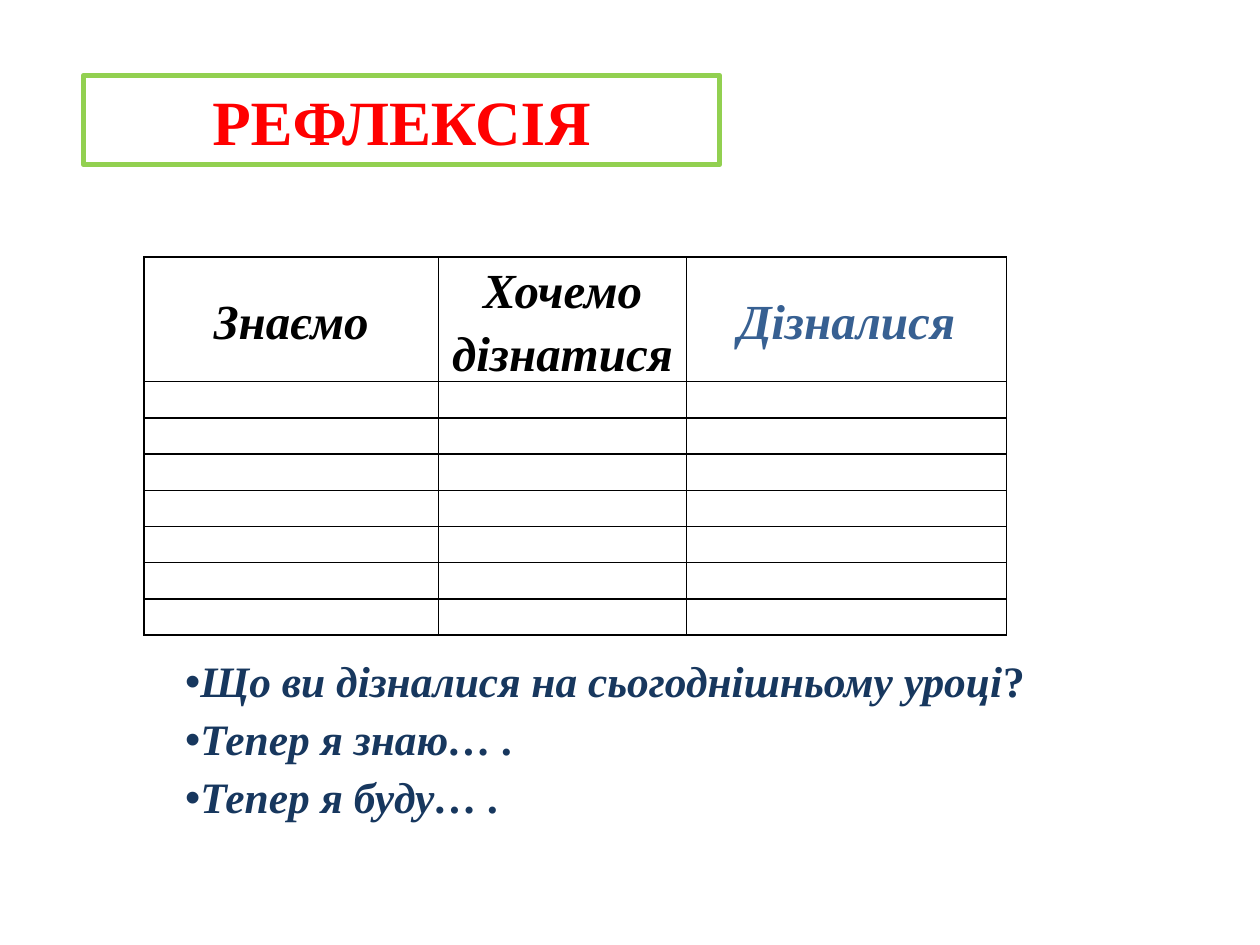
from dataclasses import dataclass

from lxml.etree import SubElement
from pptx import Presentation
from pptx.dml.color import RGBColor
from pptx.enum.text import MSO_ANCHOR, MSO_AUTO_SIZE, PP_ALIGN
from pptx.oxml.ns import qn
from pptx.util import Cm, Pt

FONT = "Times New Roman"
BLACK, WHITE, RED, GREEN = "000000", "FFFFFF", "FF0000", "92D050"
NAVY, BLUE = "17375E", "376092"


@dataclass
class Column:
    heading: str
    width: float
    color: str = BLACK


COLUMNS = [
    Column("Знаємо", 5.94),
    Column("Хочемо дізнатися", 5.0),
    Column("Дізналися", 6.45, BLUE),
]
EMPTY_ROWS = 7
HEADER_HEIGHT, ROW_HEIGHT = 2.48, 0.73
QUESTIONS = [
    ["Що ви дізналися на сьогоднішньому уроці", "?"],
    ["Тепер я знаю… ."],
    ["Тепер я буду… ."],
]


def rgb(color: str) -> RGBColor:
    return RGBColor.from_string(color)


def place(shape, left: float, top: float, width: float, height: float) -> None:
    shape.left, shape.top = Cm(left), Cm(top)
    shape.width, shape.height = Cm(width), Cm(height)


def format_run(run, size: float, color: str, italic: bool = True) -> None:
    font = run.font
    font.name, font.size, font.bold, font.italic = FONT, Pt(size), True, italic
    font.color.rgb = rgb(color)


def add_bullet(paragraph) -> None:
    """Bullet set in from the margin, with the text right behind it."""
    properties = paragraph._p.get_or_add_pPr()
    properties.set("marL", str(Cm(0.97)))
    properties.set("indent", str(Cm(1.24)))
    SubElement(properties, qn("a:buChar"), char="•")


def add_borders(cell) -> None:
    properties = cell._tc.get_or_add_tcPr()
    for index, side in enumerate(("lnL", "lnR", "lnT", "lnB")):
        line = properties.makeelement(qn(f"a:{side}"), {"w": str(Pt(1))})
        fill = SubElement(line, qn("a:solidFill"))
        SubElement(fill, qn("a:srgbClr"), val=BLACK)
        properties.insert(index, line)


def fill_title(shape) -> None:
    place(shape, 1.68, 1.52, 12.83, 1.8)
    shape.fill.solid()
    shape.fill.fore_color.rgb = rgb(WHITE)
    shape.line.color.rgb = rgb(GREEN)
    shape.line.width = Pt(3)
    frame = shape.text_frame
    frame.text = "РЕФЛЕКСІЯ"
    frame.auto_size = MSO_AUTO_SIZE.NONE
    frame.vertical_anchor = MSO_ANCHOR.MIDDLE
    paragraph = frame.paragraphs[0]
    paragraph.alignment = PP_ALIGN.CENTER
    format_run(paragraph.runs[0], 36, RED, italic=False)


def fill_questions(shape) -> None:
    place(shape, 1.27, 13.13, 22.86, 3.89)
    frame = shape.text_frame
    frame.auto_size = MSO_AUTO_SIZE.NONE
    for index, parts in enumerate(QUESTIONS):
        paragraph = frame.add_paragraph() if index else frame.paragraphs[0]
        paragraph.alignment = PP_ALIGN.JUSTIFY
        paragraph.line_spacing = 0.95
        paragraph.space_before = Pt(5 if index else 0)
        add_bullet(paragraph)
        for part in parts:
            run = paragraph.add_run()
            run.text = part
            format_run(run, 24.8, NAVY, italic=part != "?")


def add_knowledge_table(slide) -> None:
    width = sum(column.width for column in COLUMNS)
    height = HEADER_HEIGHT + EMPTY_ROWS * ROW_HEIGHT
    table = slide.shapes.add_table(
        EMPTY_ROWS + 1, len(COLUMNS), Cm(2.9), Cm(5.18), Cm(width), Cm(height)
    ).table
    table.first_row = table.horz_banding = False
    for index, row in enumerate(table.rows):
        row.height = Cm(ROW_HEIGHT if index else HEADER_HEIGHT)
    for index, column in enumerate(COLUMNS):
        table.columns[index].width = Cm(column.width)
    for cell in table.iter_cells():
        cell.fill.background()
        cell.margin_left = cell.margin_right = Cm(0.18)
        cell.margin_top = cell.margin_bottom = 0
        cell.vertical_anchor = MSO_ANCHOR.MIDDLE
        add_borders(cell)
    for row_index in range(1, EMPTY_ROWS + 1):
        for column_index in range(len(COLUMNS)):
            paragraph = table.cell(row_index, column_index).text_frame.paragraphs[0]
            SubElement(paragraph._p, qn("a:endParaRPr"), sz="1200")
    for index, column in enumerate(COLUMNS):
        frame = table.cell(0, index).text_frame
        frame.text = column.heading
        paragraph = frame.paragraphs[0]
        paragraph.alignment = PP_ALIGN.CENTER
        paragraph.line_spacing = 1.15
        format_run(paragraph.runs[0], 28, column.color)


def main() -> None:
    presentation = Presentation()
    presentation.slide_width, presentation.slide_height = Cm(25.4), Cm(19.05)
    slide = presentation.slides.add_slide(presentation.slide_layouts[1])
    fill_title(slide.shapes.title)
    fill_questions(slide.placeholders[1])
    add_knowledge_table(slide)
    presentation.save("out.pptx")


if __name__ == "__main__":
    main()
